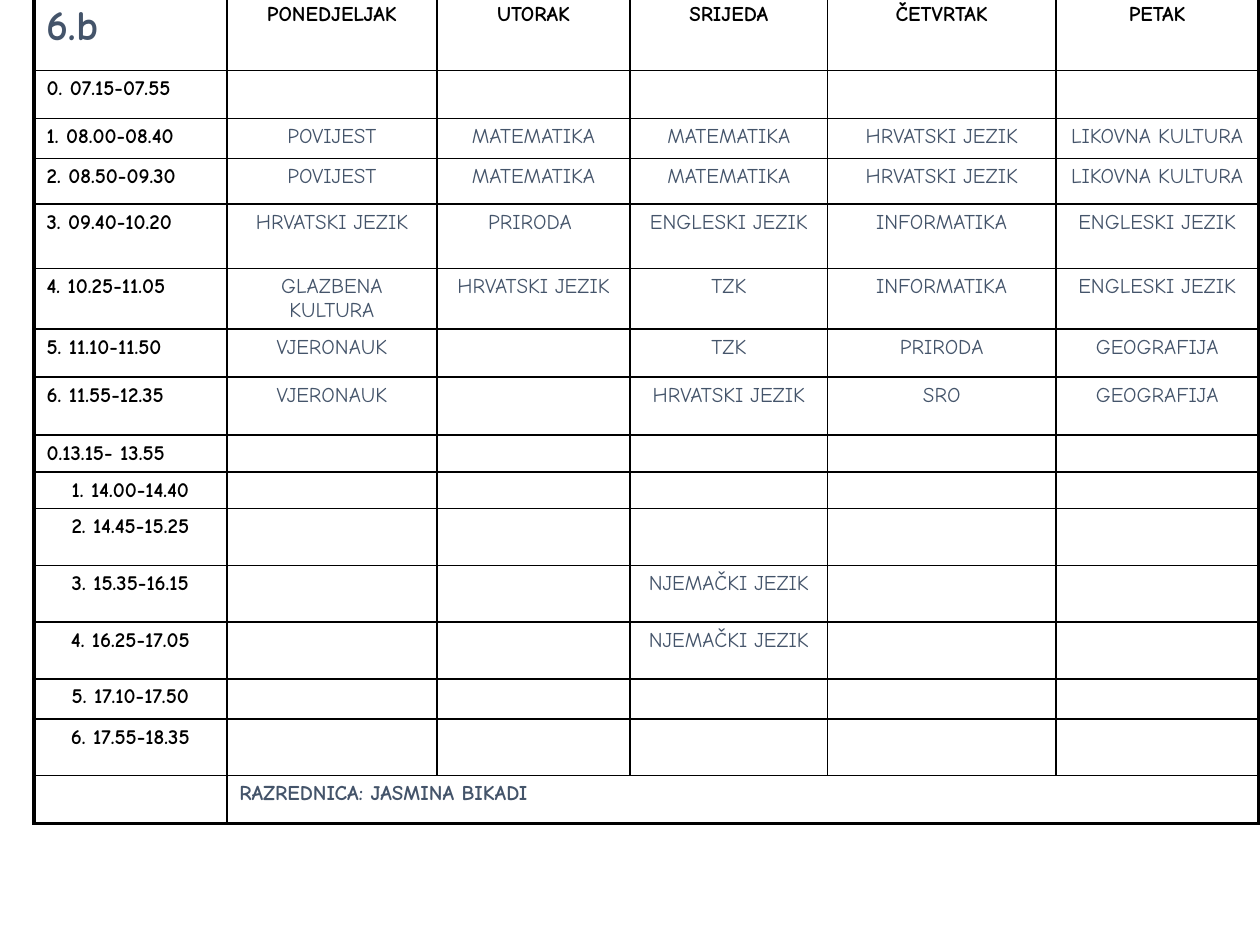
from lxml import etree
from pptx import Presentation, util as u
from pptx.dml.color import RGBColor
from pptx.enum import text
from pptx.oxml import ns

COLORS = {"black": "000000", "slate": "44546A"}
FONT = "Comic Neue"
LEFT, CENTER = text.PP_ALIGN.LEFT, text.PP_ALIGN.CENTER
THIN, THICK = 1, 2.25

col_widths = [1.53, 1.67, 1.53, 1.57, 1.81, 1.61]
row_heights = [0.59, 0.38, 0.32, 0.36, 0.51, 0.45, 0.38, 0.46,
               0.17, 0.26, 0.45, 0.45, 0.45, 0.32, 0.45, 0.38]
timetable = [
    ["6.b", "PONEDJELJAK", "UTORAK", "SRIJEDA", "ČETVRTAK", "PETAK"],
    ["0. 07.15-07.55"],
    ["1. 08.00-08.40", "POVIJEST", "MATEMATIKA", "MATEMATIKA", "HRVATSKI JEZIK", "LIKOVNA KULTURA"],
    ["2. 08.50-09.30", "POVIJEST", "MATEMATIKA", "MATEMATIKA", "HRVATSKI JEZIK", "LIKOVNA KULTURA"],
    ["3. 09.40-10.20", "HRVATSKI JEZIK", "PRIRODA ", "ENGLESKI JEZIK", "INFORMATIKA", "ENGLESKI JEZIK"],
    ["4. 10.25-11.05", "GLAZBENA KULTURA", "HRVATSKI JEZIK", "TZK", "INFORMATIKA", "ENGLESKI JEZIK"],
    ["5. 11.10-11.50", "VJERONAUK", "", "TZK", "PRIRODA", "GEOGRAFIJA"],
    ["6. 11.55-12.35", "VJERONAUK", "", "HRVATSKI JEZIK", "SRO", "GEOGRAFIJA"],
    ["0.13.15- 13.55"],
    ["1. 14.00-14.40"],
    ["2. 14.45-15.25"],
    ["3. 15.35-16.15", "", "", "NJEMAČKI JEZIK"],
    ["4. 16.25-17.05", "", "", "NJEMAČKI JEZIK"],
    ["5. 17.10-17.50"],
    ["6. 17.55-18.35"],
    ["", "RAZREDNICA: JASMINA BIKADI"],
]
n_rows, n_cols = len(row_heights), len(col_widths)
last_row, last_col = n_rows - 1, n_cols - 1
first_afternoon = 9


def set_borders(cell, widths):
    """Draw the left, right, top and bottom lines, ahead of the cell's fill."""
    tcPr = cell._tc.get_or_add_tcPr()
    for i, (side, width) in enumerate(widths.items()):
        ln = etree.Element(ns.qn(f"a:ln{side}"), w=str(u.Pt(width)))
        fill = etree.SubElement(ln, ns.qn("a:solidFill"))
        etree.SubElement(fill, ns.qn("a:srgbClr"), val=COLORS["black"])
        tcPr.insert(i, ln)


def write_cell(cell, words, align, size, color, bold):
    p = cell.text_frame.paragraphs[0]
    p.alignment = align
    if words:
        r = p.add_run()
        r.text = words
        for name, value in {"name": FONT, "size": u.Pt(size), "bold": bold}.items():
            setattr(r.font, name, value)
        r.font.color.rgb = RGBColor.from_string(COLORS[color])
    # The end mark keeps empty cells from growing to the default text size
    end = etree.SubElement(p._p, ns.qn("a:endParaRPr"), sz=str(size * 100))
    etree.SubElement(end, ns.qn("a:latin"), typeface=FONT)


prs = Presentation()
prs.slide_width, prs.slide_height = u.Inches(10), u.Inches(7.5)
s = prs.slides.add_slide(prs.slide_layouts[6])

# Table grid
frame = s.shapes.add_table(n_rows, n_cols, u.Inches(0.27), u.Inches(-0.03),
                           u.Inches(sum(col_widths)), u.Inches(sum(row_heights)))
table = frame.table
table.first_row = table.horz_banding = False
for column, width in zip(table.columns, col_widths):
    column.width = u.Inches(width)
for row, height in zip(table.rows, row_heights):
    row.height = u.Inches(height)

# Class teacher spans the five days
table.cell(last_row, 1).merge(table.cell(last_row, last_col))

# Times, days and lessons
for i, row in enumerate(timetable):
    for j in range(n_cols):
        cell = table.cell(i, j)
        words = row[j] if j < len(row) else ""
        is_class = i == 0 and j == 0
        is_heading = i in (0, last_row) or j == 0
        is_left = i == last_row or (j == 0 and i < first_afternoon)
        is_slate = is_class or (j > 0 and i > 0)

        for name, value in {"margin_left": 0.1, "margin_right": 0.1,
                            "margin_top": 0.05, "margin_bottom": 0.05}.items():
            setattr(cell, name, u.Inches(value))
        cell.fill.background()
        write_cell(cell, words, LEFT if is_left else CENTER, 24 if is_class else 12,
                   "slate" if is_slate else "black", is_heading)
        set_borders(cell, {"L": THICK if j == 0 else THIN,
                           "R": THICK if j == last_col or (i == last_row and j > 0) else THIN,
                           "T": THICK if i == 0 else THIN,
                           "B": THICK if i == last_row else THIN})

prs.save("out.pptx")
